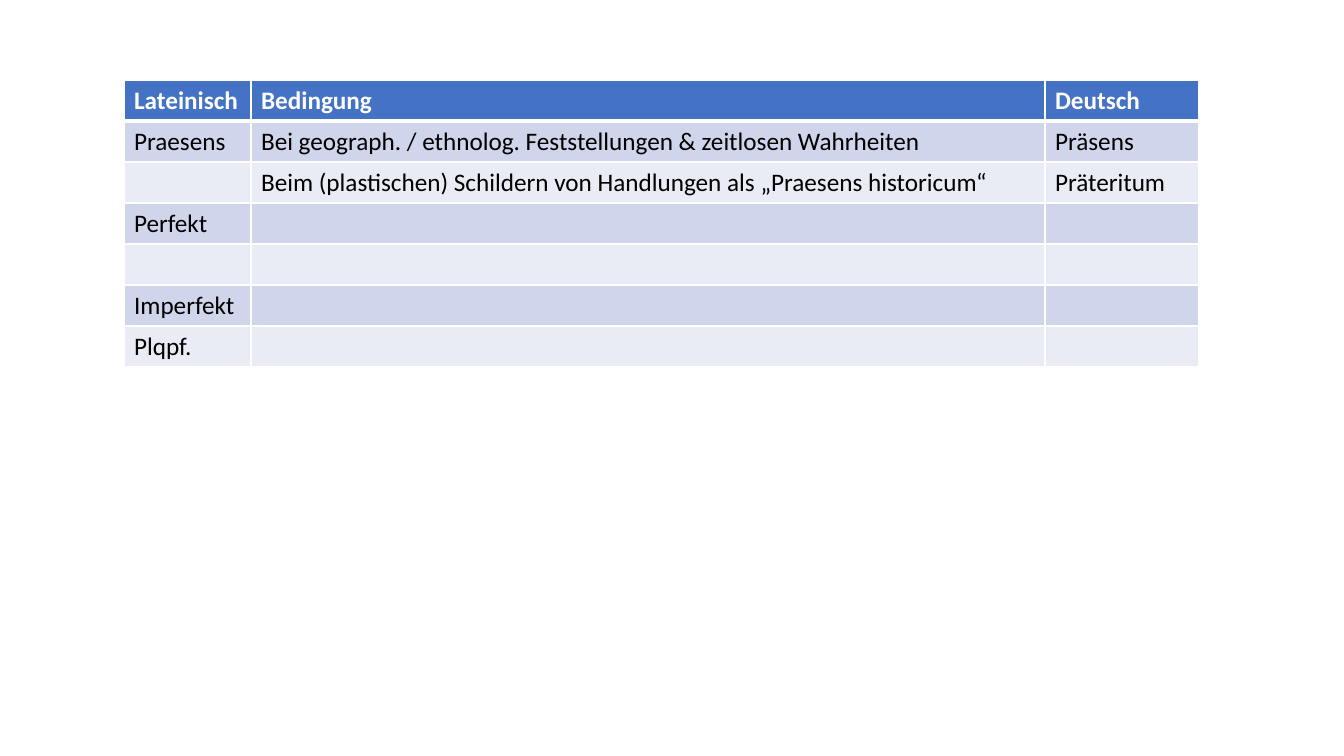
"""Build a slide with a table of Latin tenses and their German renderings."""
from lxml.etree import SubElement
from pptx import Presentation
from pptx.dml.color import RGBColor
from pptx.oxml.ns import qn
from pptx.util import Pt

PX = 914400 / 100.8
WHITE = RGBColor(0xFF, 0xFF, 0xFF)
BLACK = RGBColor(0x00, 0x00, 0x00)
BLUE = RGBColor(0x44, 0x72, 0xC4)
BAND_DARK = RGBColor(0xCF, 0xD5, 0xEA)
BAND_LIGHT = RGBColor(0xE9, 0xEB, 0xF5)

COLUMN_WIDTHS = [127, 794, 154]
ROW_HEIGHT = 41
ROWS = [
    ("Lateinisch", "Bedingung", "Deutsch"),
    ("Praesens", "Bei geograph. / ethnolog. Feststellungen & zeitlosen Wahrheiten", "Präsens"),
    ("", "Beim (plastischen) Schildern von Handlungen als „Praesens historicum“", "Präteritum"),
    ("Perfekt", "", ""),
    ("", "", ""),
    ("Imperfekt", "", ""),
    ("Plqpf.", "", ""),
]


def px(n):
    return round(n * PX)


def add_border(cell, side, points):
    line = SubElement(cell._tc.get_or_add_tcPr(), qn(f"a:ln{side}"), w=str(Pt(points)))
    fill = SubElement(line, qn("a:solidFill"))
    SubElement(fill, qn("a:srgbClr"), val=str(WHITE))


prs = Presentation()
prs.slide_width, prs.slide_height = px(1344), px(756)
s = prs.slides.add_slide(prs.slide_layouts[6])

table = s.shapes.add_table(
    len(ROWS), len(COLUMN_WIDTHS), px(124), px(80),
    px(sum(COLUMN_WIDTHS)), px(ROW_HEIGHT * len(ROWS)),
).table
for column, width in zip(table.columns, COLUMN_WIDTHS):
    column.width = px(width)

for i, texts in enumerate(ROWS):
    table.rows[i].height = px(ROW_HEIGHT)
    is_header = i == 0
    band = BLUE if is_header else BAND_DARK if i % 2 else BAND_LIGHT
    font_format = {"name": "Calibri", "size": Pt(18), "bold": is_header}
    for j, text in enumerate(texts):
        cell = table.cell(i, j)
        borders = {"L": 1, "R": 1, "T": 3 if i == 1 else 1, "B": 3 if is_header else 1}
        for side, points in borders.items():
            add_border(cell, side, points)
        cell.fill.solid()
        cell.fill.fore_color.rgb = band
        if text:
            r = cell.text_frame.paragraphs[0].add_run()
            r.text = text
            for name, value in font_format.items():
                setattr(r.font, name, value)
            r.font.color.rgb = WHITE if is_header else BLACK

prs.save("out.pptx")
